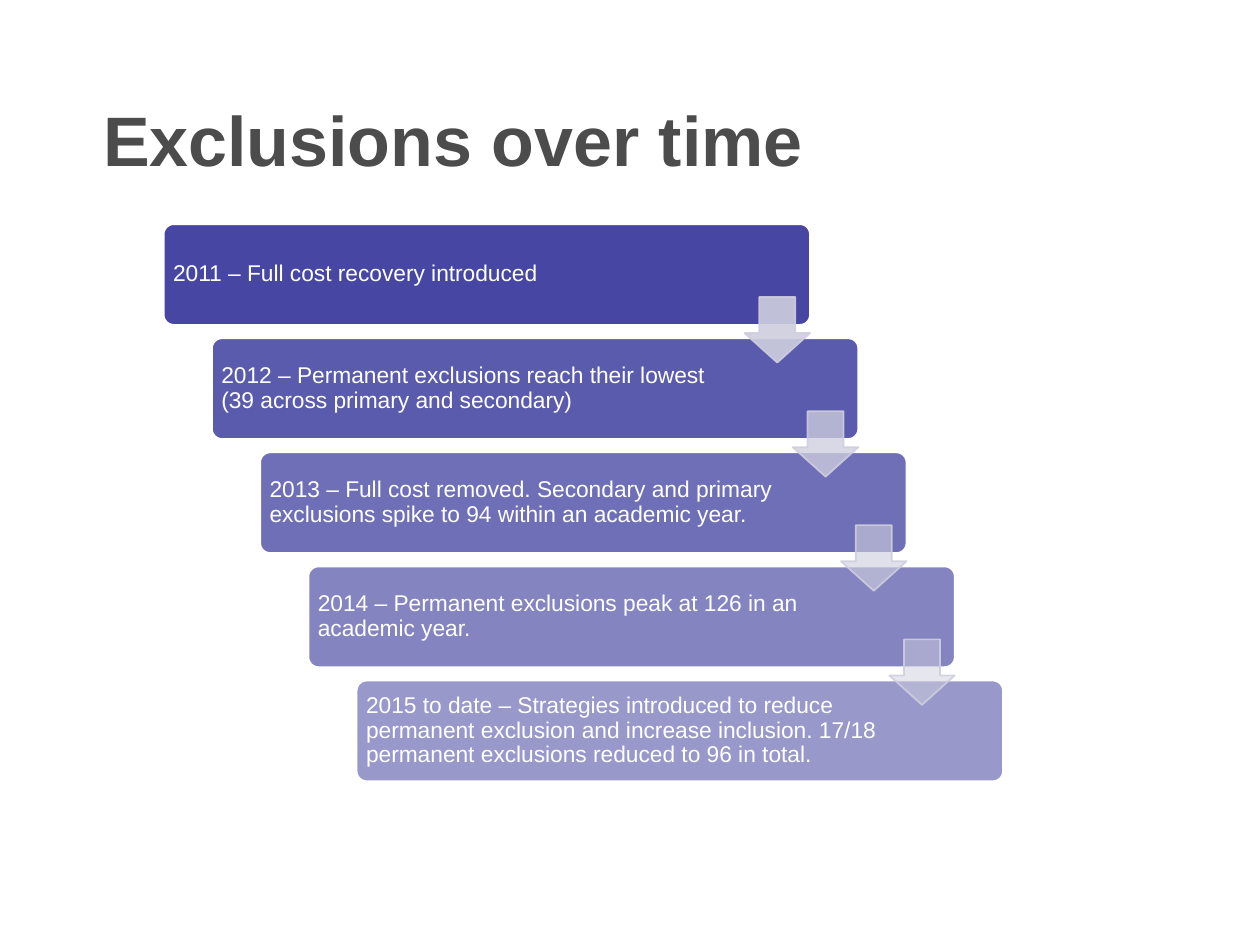
from lxml.etree import SubElement
from pptx import Presentation
from pptx.dml.color import RGBColor
from pptx.enum.shapes import MSO_SHAPE
from pptx.enum.text import MSO_ANCHOR
from pptx.oxml.ns import qn
from pptx.util import Cm, Pt

COLORS = {"title": "4C4C4C", "step": "333399", "arrow": "CECEDE", "white": "FFFFFF"}
STEPS = [
    "2011 – Full cost recovery introduced",
    "2012 – Permanent exclusions reach their lowest (39 across primary and secondary)",
    "2013 – Full cost removed. Secondary and primary exclusions spike to 94 "
    "within an academic year.",
    "2014 – Permanent exclusions peak at 126 in an academic year.",
    "2015 to date – Strategies introduced to reduce permanent exclusion and increase "
    "inclusion. 17/18 permanent exclusions reduced to 96 in total.",
]


def paint(fill, color, alpha=100):
    """Make a fill solid, with its opacity in percent."""
    fill.solid()
    fill.fore_color.rgb = RGBColor.from_string(COLORS[color])
    if alpha < 100:
        tint = fill._xPr.find(qn("a:solidFill"))[0]
        SubElement(tint, qn("a:alpha"), val=str(round(alpha * 1000)))


def add_form(shapes, kind, box, adjust, color, alpha, edge, clear=100):
    form = shapes.add_shape(kind, *map(Cm, box))
    form.shadow.inherit = False
    for i, value in enumerate(adjust):
        form.adjustments[i] = value
    paint(form.fill, color, alpha)
    form.line.width = Pt(1)
    paint(form.line.fill, edge, clear)


def add_text(shapes, box, text, size, color, inset, bold=False,
             anchor=MSO_ANCHOR.TOP, space=1.0):
    """Add a text box; inset is the side and the top margin in cm."""
    frame = shapes.add_textbox(*map(Cm, box)).text_frame
    frame.word_wrap = True
    frame.vertical_anchor = anchor
    frame.margin_left = frame.margin_right = Cm(inset[0])
    frame.margin_top = frame.margin_bottom = Cm(inset[1])
    para = frame.paragraphs[0]
    para.line_spacing = space
    run = para.add_run()
    run.text = text
    font = run.font
    font.name, font.size, font.bold = "Arial", Pt(size), bold
    font.color.rgb = RGBColor.from_string(COLORS[color])


def add_stairs(slide, left, top, width, height):
    """Draw the steps down the box, with an arrow from each to the next."""
    shapes = slide.shapes.add_group_shape().shapes
    last = len(STEPS) - 1
    wide, high = 13.03, 2.03
    shift, drop = (width - wide) / last, (height - high) / last
    pad, side = 0.06, 1.32
    spots = [(left + i * shift, top + i * drop) for i in range(len(STEPS))]

    for i, ((x, y), text) in enumerate(zip(spots, STEPS)):
        add_form(shapes, MSO_SHAPE.ROUNDED_RECTANGLE, (x, y, wide, high),
                 [0.1], "step", 90 - 10 * i, "white")
        add_text(shapes, (x + pad, y + pad, 10.64, high - 2 * pad), text, 13,
                 "white", (0.13, 0.13), anchor=MSO_ANCHOR.MIDDLE, space=0.9)

    for i, (x, y) in enumerate(spots[:-1]):
        add_form(shapes, MSO_SHAPE.DOWN_ARROW,
                 (x + wide - side, y + 1.47, side, side), [0.55, 0.45],
                 "arrow", 90 - 40 * i / (last - 1), "arrow", 90)


def main():
    deck = Presentation()
    deck.slide_width, deck.slide_height = Cm(25.4), Cm(19.05)
    slide = deck.slides.add_slide(deck.slide_layouts[6])
    add_text(slide.shapes, (1.9, 1.7, 22.66, 3.18), "Exclusions over time", 40,
             "title", (0.18, 0.25), bold=True)
    add_stairs(slide, 3.3, 4.52, 16.92, 11.23)
    deck.save("out.pptx")


if __name__ == "__main__":
    main()
